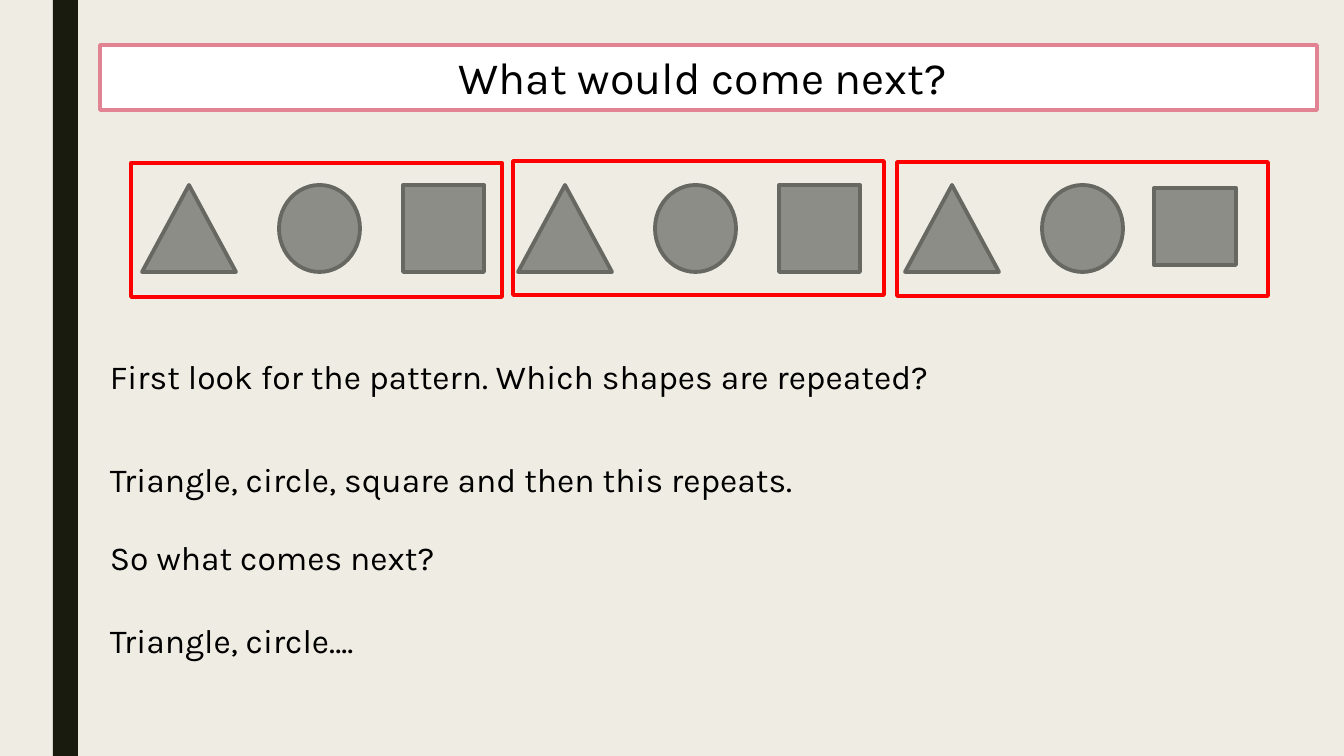
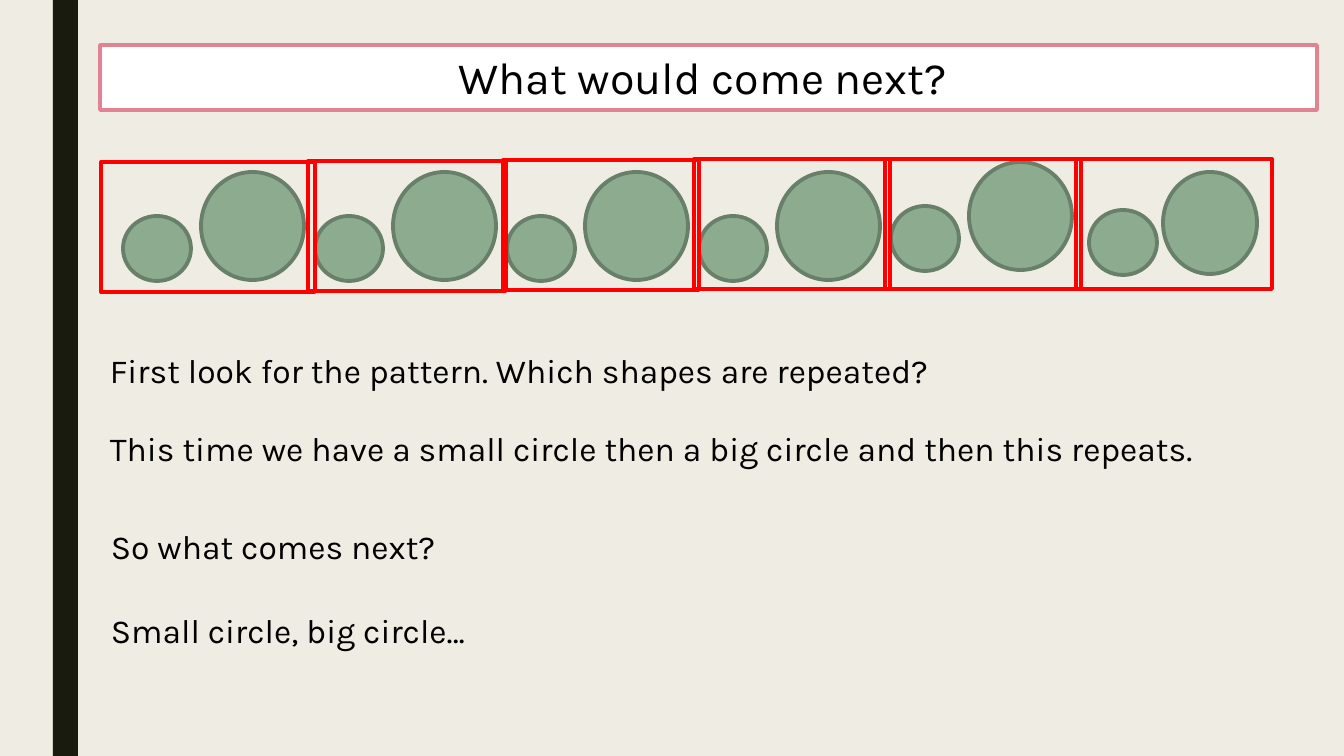
from pptx import Presentation
from pptx import util as u
from pptx.dml.color import RGBColor
from pptx.enum import shapes, text

PX = 914400 / 100.8
WIDTH, HEIGHT = 1344, 756
FONT = "Karla"
LINE = u.Pt(2.75)
COLORS = {
    "paper": "EFEDE3", "band": "191B0E", "title": "FFFFFF", "title_line": "E28394",
    "ink": "000000", "frame": "FF0000", "grey": "8C8D86", "grey_line": "686863",
    "green": "8DAB8E", "green_line": "687F69",
}
KIND = shapes.MSO_SHAPE
TRIANGLE, CIRCLE, SQUARE = KIND.ISOSCELES_TRIANGLE, KIND.OVAL, KIND.RECTANGLE

# Units of each pattern: (kind, left, top, width, height) from the unit's corner
THREE_SHAPES = [(TRIANGLE, 0, 0, 94, 87), (CIRCLE, 137, 0, 81, 87), (SQUARE, 261, 0, 81, 87)]
THREE_SHAPES_END = THREE_SHAPES[:2] + [(SQUARE, 249, 3, 82, 77)]
TWO_CIRCLES = [(CIRCLE, 0, 44, 68, 65), (CIRCLE, 78, 0, 103, 108)]
TWO_CIRCLES_END = [(CIRCLE, 0, 38, 68, 65), (CIRCLE, 74, 0, 94, 102)]


def emu(*lengths):
    return [u.Emu(round(n * PX)) for n in lengths]


def rgb(name):
    return RGBColor.from_string(COLORS[name])


def paint(sp, fill=None, line=None):
    if fill:
        sp.fill.solid()
        sp.fill.fore_color.rgb = rgb(fill)
    else:
        sp.fill.background()
    if line:
        sp.line.color.rgb = rgb(line)
        sp.line.width = LINE
    else:
        sp.line.fill.background()


def add_shape(parent, kind, box, fill=None, line=None):
    sp = parent.add_shape(kind, *emu(*box))
    sp.shadow.inherit = False
    paint(sp, fill, line)
    return sp


def write(sp, words, size, align=text.PP_ALIGN.LEFT):
    tf = sp.text_frame
    tf.word_wrap = True
    tf.auto_size = text.MSO_AUTO_SIZE.NONE
    tf.vertical_anchor = text.MSO_ANCHOR.TOP
    p = tf.paragraphs[0]
    p.text, p.alignment = words, align
    p.font.name, p.font.size = FONT, u.Pt(size)
    p.font.color.rgb = rgb("ink")


def set_master(prs, slide):
    """Put the background and the side band on the slide master."""
    master = prs.slide_master
    master.background.fill.solid()
    master.background.fill.fore_color.rgb = rgb("paper")
    band = add_shape(slide.shapes, SQUARE, (53, 0, 25, HEIGHT), "band")
    band.element.nvSpPr.cNvPr.set("id", "99")
    master.shapes.element.insert(2, band.element)


def add_title(slide, box):
    title = slide.shapes.title
    title.left, title.top, title.width, title.height = emu(*box)
    paint(title, "title", "title_line")
    write(title, "What would come next? ", 32, text.PP_ALIGN.CENTER)


def add_unit(slide, left, top, parts, color):
    """Draw one group of the pattern from its top left corner."""
    group = slide.shapes.add_group_shape()
    for kind, dx, dy, w, h in parts:
        add_shape(group.shapes, kind, (left + dx, top + dy, w, h), color, color + "_line")


def add_pattern_slide(prs, color, units, frames, lines):
    slide = prs.slides.add_slide(prs.slide_layouts[5])
    add_title(slide, (100, 45, 1217, 65))
    for left, top, parts in units:
        add_unit(slide, left, top, parts, color)
    # Red frames mark each repeat
    for box in frames:
        add_shape(slide.shapes, SQUARE, box, line="frame")
    # Questions and answers
    for left, top, words in lines:
        write(slide.shapes.add_textbox(*emu(left, top, 1217, 50)), words, 24)
    return slide


def main():
    prs = Presentation()
    prs.slide_width, prs.slide_height = emu(WIDTH, HEIGHT)

    # Triangle, circle, square
    first = add_pattern_slide(
        prs, "grey",
        [(142, 185, THREE_SHAPES), (518, 185, THREE_SHAPES), (905, 185, THREE_SHAPES_END)],
        [(left, top, 371, 134) for left, top in ((131, 163), (513, 161), (897, 162))],
        [(100, 351, "First look for the pattern. Which shapes are repeated?"),
         (100, 454, "Triangle, circle, square and then this repeats."),
         (100, 532, "So what comes next?"),
         (100, 615, "Triangle, circle….")])
    set_master(prs, first)

    # Small circle, big circle
    units = [(123 + 192 * i, 172, TWO_CIRCLES) for i in range(4)]
    units += [(891, 162, TWO_CIRCLES), (1089, 172, TWO_CIRCLES_END)]
    frames = [(101, 162, 214), (308, 161, 198), (503, 160, 196),
              (694, 159, 196), (885, 159, 196), (1076, 159, 196)]
    add_pattern_slide(
        prs, "green", units,
        [(left, top, width, 130) for left, top, width in frames],
        [(100, 345, "First look for the pattern. Which shapes are repeated?"),
         (100, 423, "This time we have a small circle then a big circle and then this repeats."),
         (101, 521, "So what comes next?"),
         (101, 605, "Small circle, big circle…")])

    prs.save("out.pptx")


if __name__ == "__main__":
    main()
